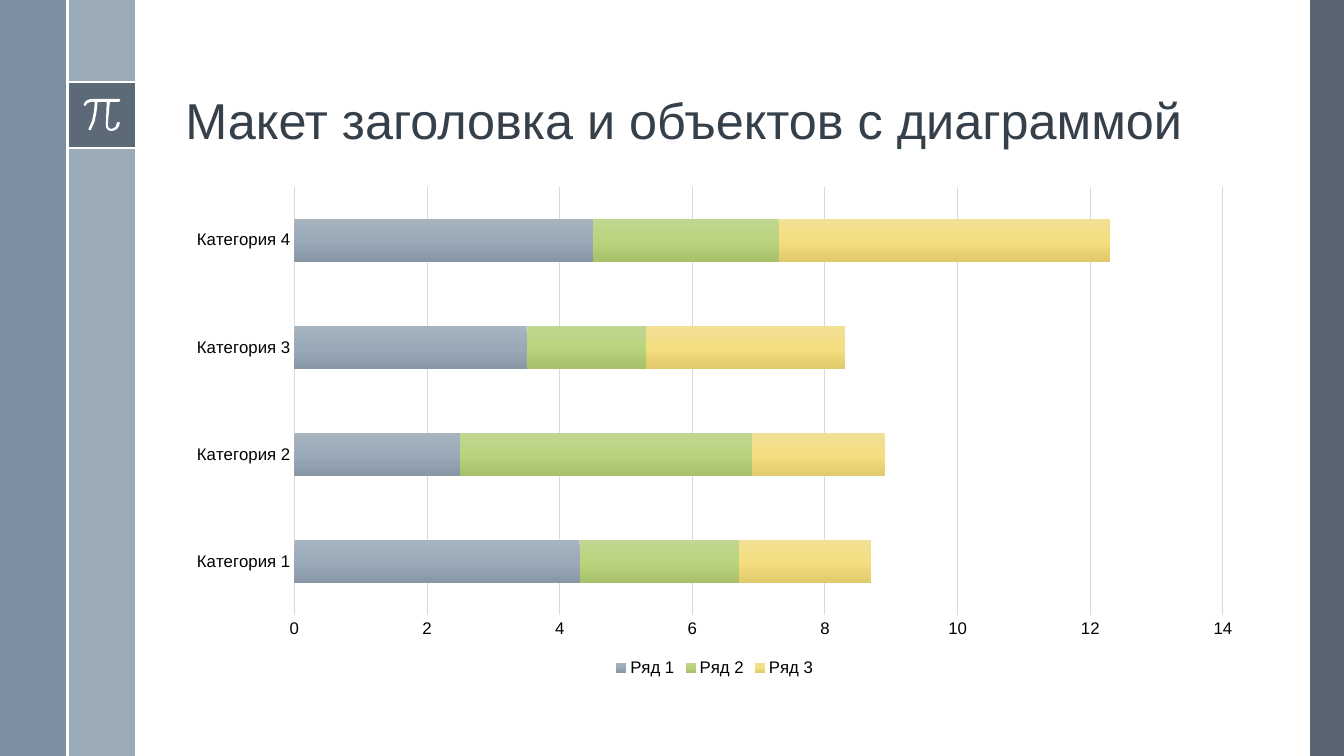
from copy import deepcopy
from dataclasses import dataclass

from lxml.etree import SubElement
from pptx import Presentation
from pptx.chart.data import CategoryChartData
from pptx.dml.color import RGBColor
from pptx.enum.chart import (
    XL_CHART_TYPE as ChartType,
    XL_LEGEND_POSITION as LegendPosition,
    XL_TICK_MARK as TickMark,
)
from pptx.enum.shapes import MSO_CONNECTOR as Connector, MSO_SHAPE as Shape
from pptx.enum.text import MSO_ANCHOR as Anchor, MSO_AUTO_SIZE as AutoSize, PP_ALIGN as Align
from pptx.oxml.ns import qn
from pptx.util import Cm, Pt


@dataclass(frozen=True)
class Theme:
    font: str = "Arial"
    title_size: float = 36
    chart_size: float = 12
    rule_width: float = 1.5
    grid_width: float = 0.75
    white: str = "FFFFFF"
    black: str = "000000"
    title: str = "35404A"
    dark: str = "475562"
    steel: str = "6A8093"
    pale: str = "9BAAB7"
    grid: str = "D9D9D9"
    series: tuple = (
        ("A6B4BF", "9AAAB8", "8797A6"),
        ("C0D691", "BAD47E", "A7C16B"),
        ("F2E095", "F4DE80", "E0CA6B"),
    )


THEME = Theme()
WIDTH, HEIGHT = 33.87, 19.05
BAND = 1.7
EDGE = 0.85
BADGE_TOP, BADGE_BOTTOM = 2.06, 3.74
CONTENT_LEFT, CONTENT_WIDTH = 4.42, 27.18

CATEGORIES = [f"Категория {number}" for number in range(1, 5)]
SERIES = {
    "Ряд 1": (4.3, 2.5, 3.5, 4.5),
    "Ряд 2": (2.4, 4.4, 1.8, 2.8),
    "Ряд 3": (2, 2, 3, 5),
}

# Outline of the pi sign, in hundredths of a centimetre
PI_OUTLINE = [
    (300, 249), (229, 249), (219, 253), (213, 259), (211, 264), (213, 267),
    (216, 266), (220, 260), (229, 257), (239, 257), (237, 280), (232, 305),
    (224, 323), (223, 326), (226, 328), (229, 327), (238, 308), (243, 285),
    (246, 257), (269, 257), (267, 310), (267, 320), (272, 328), (279, 330),
    (284, 330), (294, 326), (300, 318), (302, 310), (300, 307), (295, 309),
    (291, 320), (282, 325), (275, 323), (272, 318), (272, 310), (277, 257),
    (300, 257), (303, 254), (303, 251),
]


def rgb(color):
    return RGBColor.from_string(color)


def paint(shape, color, opacity=100):
    """Give a shape a flat fill with no outline and no shadow."""
    shape.shadow.inherit = False
    shape.line.fill.background()
    shape.fill.solid()
    shape.fill.fore_color.rgb = rgb(color)
    if opacity < 100:
        tint = shape.fill._xPr.find(".//" + qn("a:srgbClr"))
        SubElement(tint, qn("a:alpha"), val=str(opacity * 1000))


def add_block(slide, left, top, width, height, color, opacity=100):
    block = slide.shapes.add_shape(
        Shape.RECTANGLE, Cm(left), Cm(top), Cm(width), Cm(height))
    paint(block, color, opacity)


def add_rule(slide, x1, y1, x2, y2):
    rule = slide.shapes.add_connector(
        Connector.STRAIGHT, Cm(x1), Cm(y1), Cm(x2), Cm(y2))
    rule.line.color.rgb = rgb(THEME.white)
    rule.line.width = Pt(THEME.rule_width)
    SubElement(rule._element.spPr, qn("a:effectLst"))


def add_pi_sign(slide):
    start, *others = PI_OUTLINE
    outline = slide.shapes.build_freeform(*start, scale=Cm(0.01))
    outline.add_line_segments(others, close=True)
    paint(outline.convert_to_shape(), THEME.white)


def add_side_bands(slide):
    add_block(slide, WIDTH - EDGE, 0, EDGE, HEIGHT, THEME.dark, 90)
    add_block(slide, BAND, 0, BAND, HEIGHT, THEME.pale)
    add_block(slide, 0, 0, BAND, HEIGHT, THEME.steel, 88)
    add_block(slide, BAND, BADGE_TOP, BAND, BADGE_BOTTOM - BADGE_TOP, THEME.dark, 75)
    for level in (BADGE_TOP, BADGE_BOTTOM):
        add_rule(slide, BAND, level, 2 * BAND, level)
    add_pi_sign(slide)
    add_rule(slide, BAND, 0, BAND, HEIGHT)


def fill_title(slide, text):
    title = slide.shapes.title
    title.left, title.top = Cm(CONTENT_LEFT), Cm(0.48)
    title.width, title.height = Cm(CONTENT_WIDTH), Cm(3.45)
    frame = title.text_frame
    frame.text = text
    frame.word_wrap = True
    frame.auto_size = AutoSize.NONE
    frame.vertical_anchor = Anchor.BOTTOM
    paragraph = frame.paragraphs[0]
    paragraph.alignment = Align.LEFT
    paragraph.line_spacing = 0.9
    paragraph.font.name = THEME.font
    paragraph.font.size = Pt(THEME.title_size)
    paragraph.font.color.rgb = rgb(THEME.title)


def shade_series(series, colors):
    """Fill the bars with evenly spaced colours from top to bottom."""
    fill = series.format.fill
    fill.gradient()
    fill.gradient_angle = 270
    stops = series._element.find(".//" + qn("a:gsLst"))
    stops.append(deepcopy(stops[-1]))
    for index, (stop, color) in enumerate(zip(fill.gradient_stops, colors)):
        stop.position = index / (len(colors) - 1)
        stop.color.rgb = rgb(color)


def style_line(line):
    line.color.rgb = rgb(THEME.grid)
    line.width = Pt(THEME.grid_width)


def add_stacked_bars(slide):
    bars = CategoryChartData()
    bars.categories = CATEGORIES
    for name, values in SERIES.items():
        bars.add_series(name, values)
    chart = slide.shapes.add_chart(
        ChartType.BAR_STACKED, Cm(CONTENT_LEFT), Cm(4.45),
        Cm(CONTENT_WIDTH), Cm(12.7), bars).chart
    chart.has_title = False
    chart.font.name = THEME.font
    chart.font.size = Pt(THEME.chart_size)
    chart.font.color.rgb = rgb(THEME.black)

    plot = chart.plots[0]
    plot.vary_by_categories = False
    plot.gap_width, plot.overlap = 150, 100
    for series, colors in zip(plot.series, THEME.series):
        shade_series(series, colors)

    for axis in (chart.category_axis, chart.value_axis):
        axis.major_tick_mark = axis.minor_tick_mark = TickMark.NONE
    style_line(chart.category_axis.format.line)
    scale = chart.value_axis
    scale.minimum_scale, scale.maximum_scale, scale.major_unit = 0, 14, 2
    scale.format.line.fill.background()
    style_line(scale.major_gridlines.format.line)

    chart.has_legend = True
    chart.legend.position = LegendPosition.BOTTOM
    chart.legend.include_in_layout = False


def main():
    deck = Presentation()
    deck.slide_width, deck.slide_height = Cm(WIDTH), Cm(HEIGHT)
    slide = deck.slides.add_slide(deck.slide_layouts.get_by_name("Title Only"))
    add_side_bands(slide)
    fill_title(slide, "Макет заголовка и объектов с диаграммой")
    add_stacked_bars(slide)
    deck.save("out.pptx")


if __name__ == "__main__":
    main()
